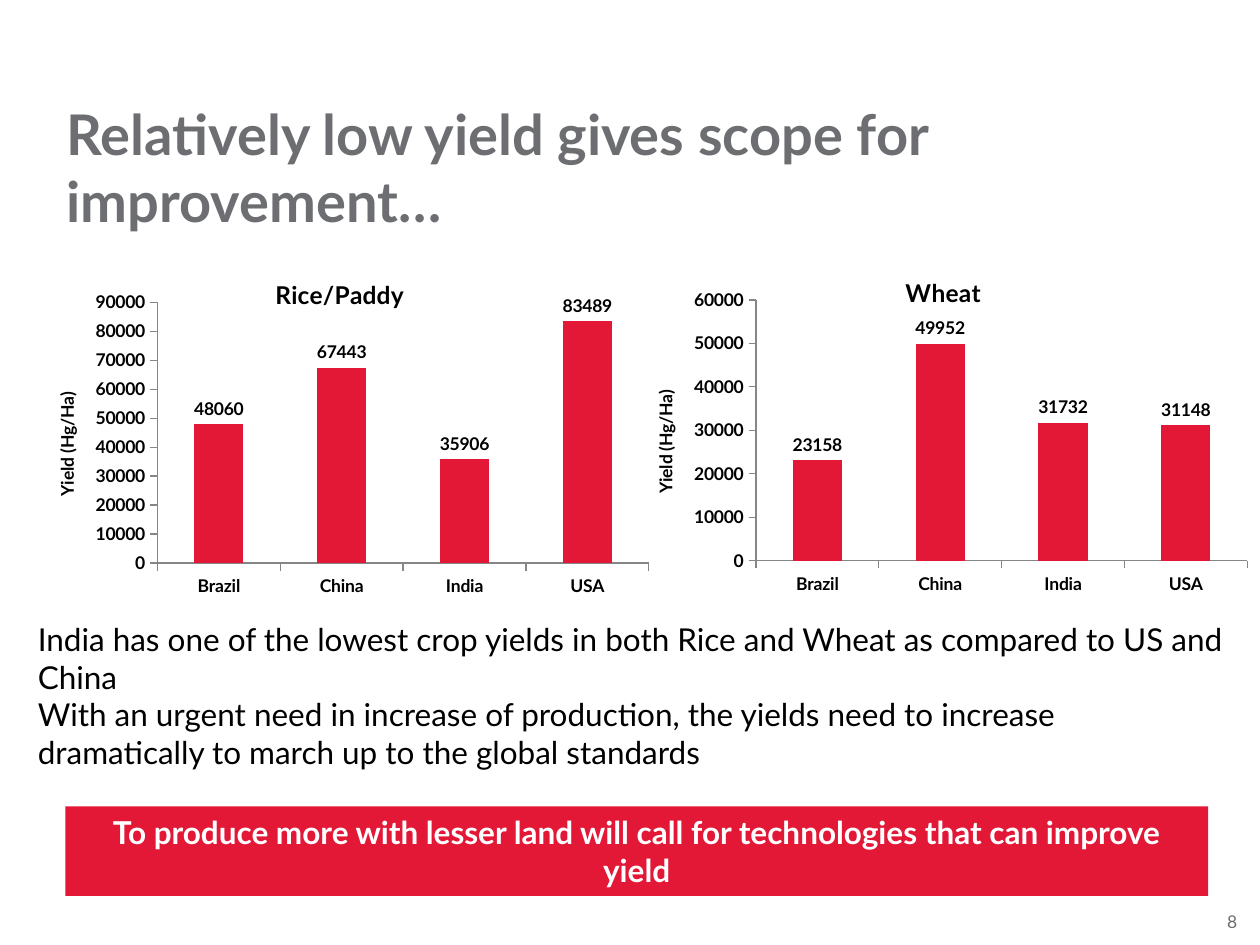
from dataclasses import dataclass

from pptx import Presentation
from pptx.chart.data import CategoryChartData
from pptx.dml.color import RGBColor
from pptx.enum.chart import XL_CHART_TYPE, XL_LABEL_POSITION, XL_TICK_MARK
from pptx.enum.shapes import MSO_SHAPE
from pptx.enum.text import MSO_ANCHOR, PP_ALIGN
from pptx.oxml import parse_xml
from pptx.oxml.ns import nsdecls, qn
from pptx.util import Pt

COLUMN = XL_CHART_TYPE.COLUMN_CLUSTERED
OUTSIDE_END = XL_LABEL_POSITION.OUTSIDE_END
TICK_OUT, TICK_NONE = XL_TICK_MARK.OUTSIDE, XL_TICK_MARK.NONE
RECTANGLE = MSO_SHAPE.RECTANGLE
TOP, MIDDLE = MSO_ANCHOR.TOP, MSO_ANCHOR.MIDDLE
LEFT, CENTER, RIGHT = PP_ALIGN.LEFT, PP_ALIGN.CENTER, PP_ALIGN.RIGHT


@dataclass(frozen=True)
class Theme:
    """Colours, font and type sizes of the slide."""
    font: str = "Lato"
    red: RGBColor = RGBColor(0xE3, 0x18, 0x37)
    gray: RGBColor = RGBColor(0x6D, 0x6E, 0x71)
    axis: RGBColor = RGBColor(0x86, 0x86, 0x86)
    black: RGBColor = RGBColor(0, 0, 0)
    white: RGBColor = RGBColor(255, 255, 255)
    heading: int = 32
    body: int = 18
    chart_title: int = 14
    small: int = 10


THEME = Theme()
COUNTRIES = ("Brazil", "China", "India", "USA")


def style_font(font, size, color, bold=False):
    """Apply the theme font with a size, colour and weight."""
    font.name = THEME.font
    font.size = Pt(size)
    font.color.rgb = color
    font.bold = bold


def fill_frame(frame, lines, size, color, bold=False, align=LEFT, anchor=TOP):
    """Write one paragraph per line into a text frame."""
    frame.word_wrap = True
    frame.vertical_anchor = anchor
    for index, line in enumerate(lines):
        para = frame.paragraphs[0] if index == 0 else frame.add_paragraph()
        para.alignment = align
        span = para.add_run()
        span.text = line
        style_font(span.font, size, color, bold)


def add_text(page, bounds, lines, size, color, **options):
    """Add a text box without insets."""
    frame = page.shapes.add_textbox(*map(Pt, bounds)).text_frame
    frame.margin_left = frame.margin_right = 0
    frame.margin_top = frame.margin_bottom = 0
    fill_frame(frame, lines, size, color, **options)


def add_banner(page, bounds, line):
    """Add the red conclusion bar."""
    box = page.shapes.add_shape(RECTANGLE, *map(Pt, bounds))
    box.shadow.inherit = False
    box.fill.solid()
    box.fill.fore_color.rgb = THEME.red
    box.line.fill.background()
    fill_frame(box.text_frame, [line], THEME.body, THEME.white,
               bold=True, align=CENTER, anchor=MIDDLE)


def place_part(element, position, inner=False, **fractions):
    """Give a chart part a manual layout in fractions of the chart."""
    for old in element.findall(qn("c:layout")):
        element.remove(old)
    target = '<c:layoutTarget val="inner"/>' if inner else ""
    modes = '<c:xMode val="edge"/><c:yMode val="edge"/>'
    values = "".join(f'<c:{key} val="{value}"/>' for key, value in fractions.items())
    element.insert(position, parse_xml(
        f'<c:layout {nsdecls("c")}><c:manualLayout>{target}{modes}{values}'
        '</c:manualLayout></c:layout>'))


def style_axis(axis):
    """Set bold labels, outer ticks and a gray line."""
    axis.has_major_gridlines = False
    axis.major_tick_mark = TICK_OUT
    axis.minor_tick_mark = TICK_NONE
    axis.format.line.color.rgb = THEME.axis
    style_font(axis.tick_labels.font, THEME.small, THEME.black, True)


def add_title(title, text, size):
    """Write a chart or axis title."""
    span = title.text_frame.paragraphs[0].add_run()
    span.text = text
    style_font(span.font, size, THEME.black, True)


def add_yield_chart(page, bounds, crop, yields, top, step, title_x):
    """Add a column chart of yields by country."""
    data = CategoryChartData()
    data.categories = COUNTRIES
    data.add_series("Series 1", yields)
    chart = page.shapes.add_chart(COLUMN, *map(Pt, bounds), data).chart
    style_font(chart.font, THEME.small, THEME.black)
    chart.has_legend = False
    add_title(chart.chart_title, crop, THEME.chart_title)
    place_part(chart.chart_title._element, 1, x=title_x, y=0.12)
    plot = chart.plots[0]
    plot.vary_by_categories = False
    plot.gap_width = 150
    place_part(plot._element.getparent(), 0, inner=True, x=0.2, y=0.2, w=0.78, h=0.69)
    fill = plot.series[0].format.fill
    fill.solid()
    fill.fore_color.rgb = THEME.red
    plot.has_data_labels = True
    labels = plot.data_labels
    labels.show_value = True
    labels.position = OUTSIDE_END
    style_font(labels.font, THEME.small, THEME.black, True)
    style_axis(chart.category_axis)
    style_axis(chart.value_axis)
    chart.value_axis.minimum_scale = 0
    chart.value_axis.maximum_scale = top
    chart.value_axis.major_unit = step
    add_title(chart.value_axis.axis_title, "Yield (Hg/Ha)", THEME.small)


def main():
    """Build and save the crop yield slide."""
    deck = Presentation()
    deck.slide_width, deck.slide_height = Pt(720), Pt(540)
    page = deck.slides.add_slide(deck.slide_layouts[6])
    add_text(page, (694, 520.5, 13, 12), ["8"], THEME.small, THEME.gray,
             align=RIGHT, anchor=MIDDLE)
    add_text(page, (38, 57, 647, 78),
             ["Relatively low yield gives scope for improvement…"],
             THEME.heading, THEME.gray, bold=True)
    add_yield_chart(page, (18, 129.6, 360, 216), "Rice/Paddy",
                    (48060, 67443, 35906, 83489), 90000, 10000, 0.38)
    add_yield_chart(page, (360, 128.2, 360, 216), "Wheat",
                    (23158, 49952, 31732, 31148), 60000, 10000, 0.43)
    add_text(page, (21.6, 354.2, 678.2, 87), [
        "India has one of the lowest crop yields in both Rice and Wheat "
        "as compared to US and China",
        "With an urgent need in increase of production, the yields need to "
        "increase dramatically to march up to the global standards",
    ], THEME.body, THEME.black)
    add_banner(page, (37.4, 460.8, 653, 51.1),
               "To produce more with lesser land will call for technologies "
               "that can improve yield")
    deck.save("out.pptx")


if __name__ == "__main__":
    main()
